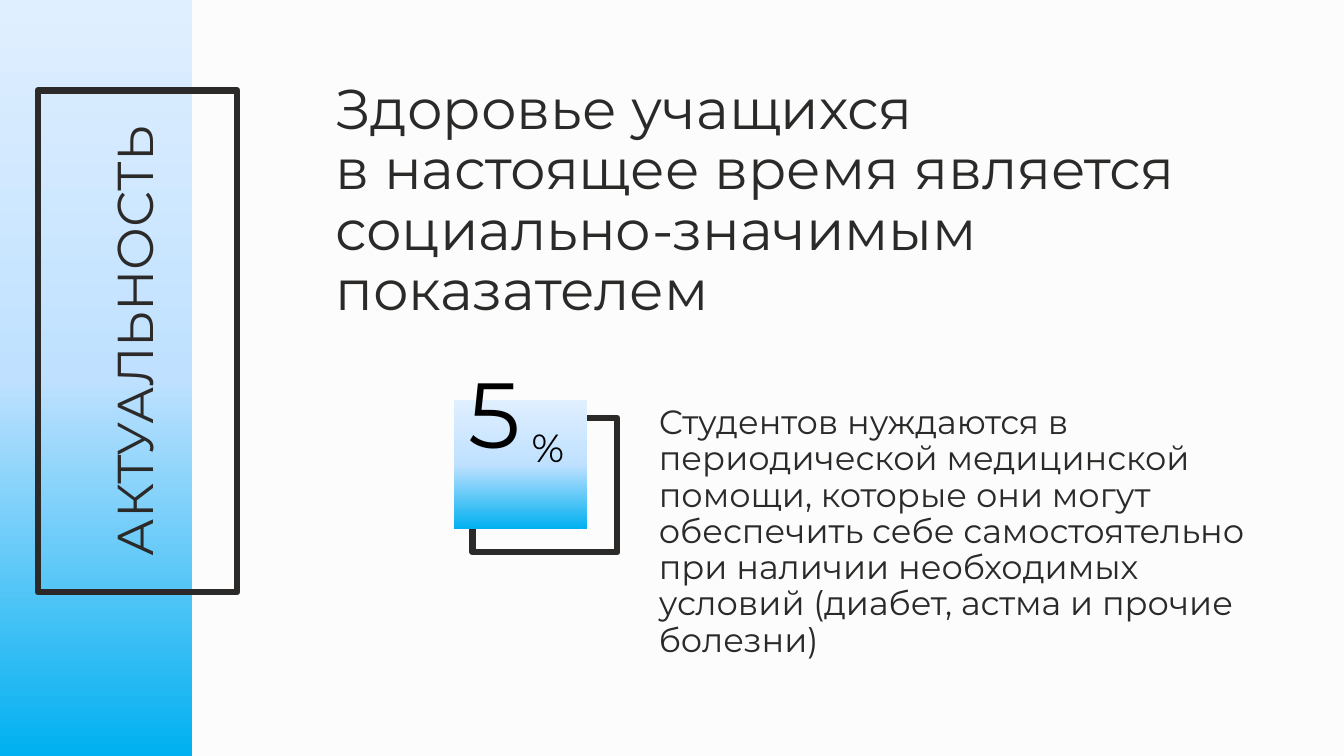
from copy import deepcopy
from dataclasses import dataclass

from pptx import Presentation
from pptx.dml.color import RGBColor
from pptx.enum.shapes import MSO_SHAPE
from pptx.enum.text import MSO_ANCHOR, PP_ALIGN
from pptx.oxml.ns import qn
from pptx.util import Emu, Pt

RECT = MSO_SHAPE.RECTANGLE
MIDDLE = MSO_ANCHOR.MIDDLE
LEFT, CENTER = PP_ALIGN.LEFT, PP_ALIGN.CENTER
PX = 9525


@dataclass(frozen=True)
class Theme:
    font: str = "Montserrat"
    paper: str = "FCFCFC"
    ink: str = "2B2A29"
    black: str = "000000"
    fade: tuple[tuple[float, str], ...] = (
        (0, "00B0F0"), (0.5, "BFE1FF"), (1, "E0EFFF"))
    stroke: float = 4.5
    lead: float = 0.9
    body: int = 24
    sign: int = 28
    label: int = 36
    title: int = 40
    figure: int = 66


THEME = Theme()


@dataclass(frozen=True)
class Box:
    left: int
    top: int
    width: int
    height: int
    turn: int = 0

    def place(self) -> tuple[Emu, ...]:
        sides = (self.left, self.top, self.width, self.height)
        return tuple(Emu(side * PX) for side in sides)


@dataclass(frozen=True)
class Panel:
    box: Box
    filled: bool


@dataclass(frozen=True)
class Note:
    box: Box
    lines: tuple[str, ...]
    size: int
    color: str = THEME.ink
    align: PP_ALIGN = LEFT


LABEL = Box(-108, 230, 478, 190, 270)

# Back to front
PANELS = (
    Panel(Box(455, 393, 128, 138, 270), False),
    Panel(Box(432, 381, 127, 123), True),
    Panel(Box(0, 0, 183, 720), True),
    Panel(LABEL, False),
)

NOTES = (
    Note(LABEL, ("АКТУАЛЬНОСТЬ",), THEME.label, align=CENTER),
    Note(Box(497, 407, 143, 42), ("%",), THEME.sign, THEME.black),
    Note(Box(437, 346, 88, 106), ("5",), THEME.figure, THEME.black),
    Note(Box(618, 358, 639, 298), (
        "Студентов нуждаются в периодической медицинской помощи, которые "
        "они могут обеспечить себе самостоятельно при наличии необходимых",
        "условий (диабет, астма и прочие болезни)"), THEME.body),
    Note(Box(310, 64, 905, 257), (
        "Здоровье учащихся",
        "в настоящее время является",
        "социально-значимым показателем"), THEME.title),
)


def rgb(code: str) -> RGBColor:
    return RGBColor.from_string(code)


def shade(shape) -> None:
    """Fill a shape with the theme fade, running upwards."""
    fill = shape.fill
    fill.gradient()
    fill.gradient_angle = 90
    stops = shape.element.spPr.find(".//" + qn("a:gsLst"))
    stops.append(deepcopy(stops[-1]))
    for stop, (point, code) in zip(fill.gradient_stops, THEME.fade):
        stop.position = point
        stop.color.rgb = rgb(code)


def draw_panel(slide, panel: Panel) -> None:
    shape = slide.shapes.add_shape(RECT, *panel.box.place())
    shape.rotation = panel.box.turn
    shape.shadow.inherit = False
    if panel.filled:
        shade(shape)
        shape.line.fill.background()
    else:
        shape.fill.background()
        shape.line.color.rgb = rgb(THEME.ink)
        shape.line.width = Pt(THEME.stroke)


def draw_note(slide, note: Note) -> None:
    shape = slide.shapes.add_textbox(*note.box.place())
    shape.rotation = note.box.turn
    frame = shape.text_frame
    frame.word_wrap = True
    frame.vertical_anchor = MIDDLE
    frame.text = "\n".join(note.lines)
    style = {"name": THEME.font, "size": Pt(note.size)}
    for para in frame.paragraphs:
        para.alignment = note.align
        para.line_spacing = THEME.lead
        for run in para.runs:
            for key, value in style.items():
                setattr(run.font, key, value)
            run.font.color.rgb = rgb(note.color)


def main() -> None:
    deck = Presentation()
    deck.slide_width, deck.slide_height = Emu(1280 * PX), Emu(720 * PX)
    slide = deck.slides.add_slide(deck.slide_layouts[6])

    # Background
    paper = slide.background.fill
    paper.solid()
    paper.fore_color.rgb = rgb(THEME.paper)

    # Panels and frames
    for panel in PANELS:
        draw_panel(slide, panel)

    # Texts
    for note in NOTES:
        draw_note(slide, note)

    deck.save("out.pptx")


if __name__ == "__main__":
    main()
